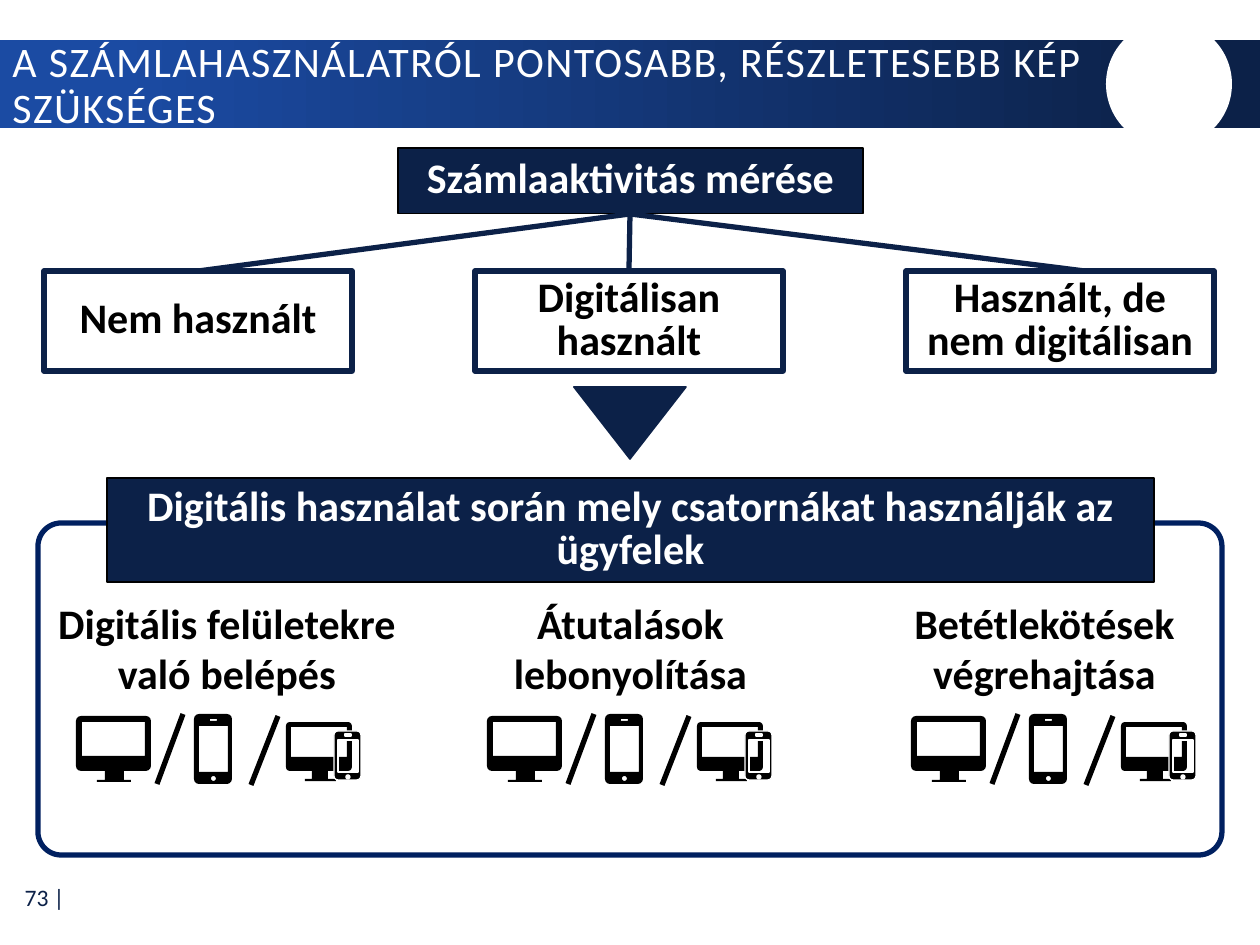
from math import cos, radians, sin
from lxml.etree import SubElement
from pptx import Presentation
from pptx.dml.color import RGBColor
from pptx.enum.shapes import MSO_CONNECTOR, MSO_SHAPE
from pptx.enum.text import MSO_ANCHOR, PP_ALIGN
from pptx.oxml.ns import qn
from pptx.util import Pt

PX = 914400 / 126
NAVY = RGBColor(0x0C, 0x21, 0x48)
BLUE = RGBColor(0x1B, 0x4B, 0xA3)
EDGE = RGBColor(0x00, 0x20, 0x60)
BLACK = RGBColor(0, 0, 0)
WHITE = RGBColor(255, 255, 255)
BOLD = {"name": "Calibri", "size": Pt(24), "bold": True}
PLAIN = {"name": "Calibri", "size": Pt(24), "bold": False}
SMALL = {"name": "Calibri", "size": Pt(13.5), "bold": False}

deck = Presentation()
deck.slide_width, deck.slide_height = round(1260 * PX), round(945 * PX)
slide = deck.slides.add_slide(deck.slide_layouts[6])
shapes = slide.shapes


def block(area, kind=None, fill=None, edge=None, width=0.75, text="",
          ink=BLACK, font=BOLD, align=PP_ALIGN.CENTER, space=1.0):
    """Add a preset shape, or a text box when no kind is given."""
    area = [round(n * PX) for n in area]
    if kind is None:
        item = shapes.add_textbox(*area)
    else:
        item = shapes.add_shape(kind, *area)
        item.shadow.inherit = False
        if fill is not None:
            item.fill.solid()
            item.fill.fore_color.rgb = fill
        if edge is None:
            item.line.fill.background()
        else:
            item.line.color.rgb = edge
            item.line.width = Pt(width)
    if text:
        frame = item.text_frame
        frame.word_wrap = True
        frame.vertical_anchor = MSO_ANCHOR.MIDDLE
        para = frame.paragraphs[0]
        para.alignment, para.line_spacing = align, space
        run = para.add_run()
        run.text = text
        run.font.color.rgb = ink
        for key, value in font.items():
            setattr(run.font, key, value)
    return item


def ring(left, top, right, low, bend=0):
    """Return the corner points of a box with rounded corners."""
    if not bend:
        return [(left, top), (right, top), (right, low), (left, low)]
    mids = [(right - bend, low - bend), (left + bend, low - bend),
            (left + bend, top + bend), (right - bend, top + bend)]
    return [(x + bend * cos(radians(90 * i + turn)),
             y + bend * sin(radians(90 * i + turn)))
            for i, (x, y) in enumerate(mids) for turn in (0, 30, 60, 90)]


# Page number and title band
block((1, 874, 76, 47), text="73 |", ink=NAVY, font=SMALL, align=PP_ALIGN.RIGHT)
band = block((0, 40, 1260, 88), MSO_SHAPE.RECTANGLE)
band.fill.gradient()
band.fill.gradient_angle = 0
for stop, (place, tone) in zip(band.fill.gradient_stops, [(0.09, BLUE), (0.95, NAVY)]):
    stop.position, stop.color.rgb = place, tone
block((1106, 21, 126, 126), MSO_SHAPE.OVAL, WHITE)
title = block((0, 45, 1115, 84), ink=WHITE, font=PLAIN, align=PP_ALIGN.LEFT, space=0.9,
              text="A SZÁMLAHASZNÁLATRÓL PONTOSABB, RÉSZLETESEBB KÉP SZÜKSÉGES")
title.text_frame.paragraphs[0].runs[0].font._element.set("spc", "80")

# Channel panel with its banner
panel = block((38, 523, 1184, 332), MSO_SHAPE.ROUNDED_RECTANGLE, WHITE, EDGE, 3)
panel.adjustments[0] = 0.07
block((107, 478, 1047, 104), MSO_SHAPE.RECTANGLE, NAVY, BLACK, ink=WHITE, space=0.85,
      text="Digitális használat során mely csatornákat használják az ügyfelek")
for left, wide, text in [(43, 368, "Digitális felületekre való belépés"),
                         (478, 305, "Átutalások lebonyolítása"),
                         (892, 305, "Betétlekötések végrehajtása")]:
    block((left, 595, wide, 105), text=text)

# Device icons: outlines and holes, measured from the left of each row
icons = [
    ([ring(118, 714, 156, 784, 5), ring(123, 726, 152, 772),
      ring(135, 776, 140, 781, 2.5), ring(134, 719, 141, 721)], None),
    ([ring(0, 716, 75, 771, 5), ring(6, 722, 69, 756),
      ring(29, 771, 48, 780), ring(21, 780, 55, 782)], None),
    ([ring(210, 722, 276, 771, 4), ring(215, 727, 271, 757),
      ring(236, 771, 252, 779), ring(229, 779, 260, 781)], None),
    ([ring(258, 731, 285, 780, 4), ring(262, 740, 282, 772),
      ring(270, 775, 274, 779, 2), ring(269, 734, 275, 736)], WHITE),
]
lines = []
for start in (76, 487, 911):
    for loops, edge in icons:
        path = None
        for loop in loops:
            dots = [(round((start + x) * PX), round(y * PX)) for x, y in loop]
            if path is None:
                path = shapes.build_freeform(*dots[0], scale=1.0)
            else:
                path.move_to(*dots[0])
            path.add_line_segments(dots[1:], close=True)
        icon = path.convert_to_shape()
        icon.shadow.inherit = False
        icon.fill.solid()
        icon.fill.fore_color.rgb = BLACK
        if edge is None:
            icon.line.fill.background()
        else:
            icon.line.color.rgb = edge
            icon.line.width = Pt(0.75)
    lines += [(start + 107, 714, start + 81, 784, BLACK),
              (start + 202, 716, start + 175, 785, BLACK)]

# Tree of account use
block((398, 148, 465, 66), MSO_SHAPE.RECTANGLE, NAVY, BLACK, ink=WHITE, space=0.85,
      text="Számlaaktivitás mérése")
for i, (text, end) in enumerate([("Nem használt", 198), ("Digitálisan használt", 629),
                                 ("Használt, de nem digitálisan", 1085)]):
    block((44 + 431 * i, 271, 308, 100), MSO_SHAPE.RECTANGLE, WHITE, NAVY, 3,
          text=text, space=0.85)
    lines.append((630, 214, end, 271, NAVY))

# Branches and icon slashes
for *ends, tone in lines:
    link = shapes.add_connector(MSO_CONNECTOR.STRAIGHT, *[round(n * PX) for n in ends])
    link.line.color.rgb = tone
    link.line.width = Pt(3)
    SubElement(link._element.spPr, qn("a:effectLst"))

# Down pointer
point = block((574, 387, 112, 72), MSO_SHAPE.ISOSCELES_TRIANGLE, NAVY, NAVY, 1)
point._element.spPr.xfrm.set("flipV", "1")

deck.save("out.pptx")
